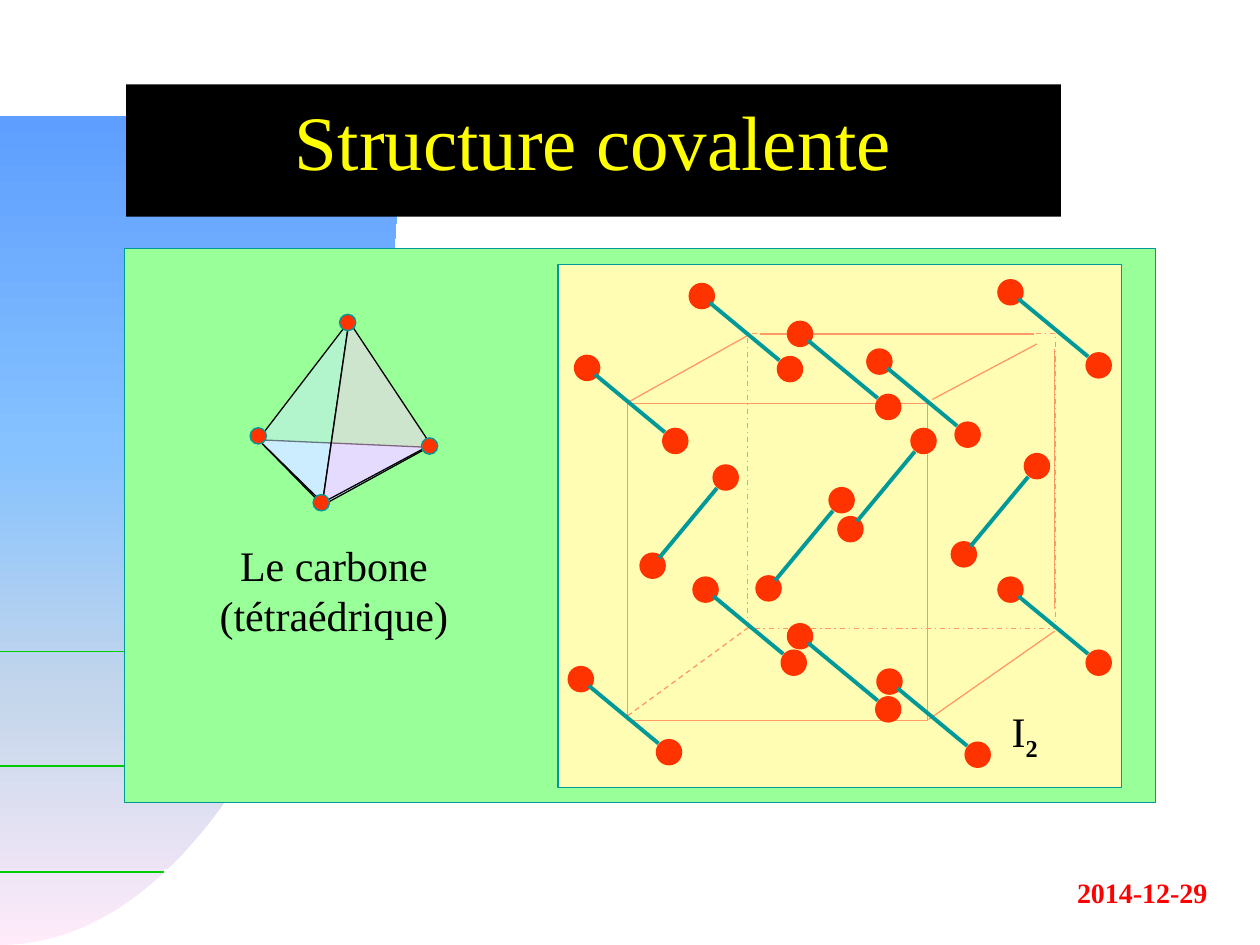
from copy import deepcopy
from dataclasses import dataclass

from pptx import Presentation
from pptx.dml.color import RGBColor
from pptx.enum.dml import MSO_LINE
from pptx.enum.shapes import MSO_CONNECTOR, MSO_SHAPE
from pptx.enum.text import MSO_ANCHOR, PP_ALIGN
from pptx.oxml.ns import qn
from pptx.oxml.xmlchemy import OxmlElement
from pptx.util import Inches, Pt

RECTANGLE, OVAL = MSO_SHAPE.RECTANGLE, MSO_SHAPE.OVAL
STRAIGHT = MSO_CONNECTOR.STRAIGHT
DASH, DASH_DOT = MSO_LINE.DASH, MSO_LINE.DASH_DOT
LEFT, CENTER, RIGHT = PP_ALIGN.LEFT, PP_ALIGN.CENTER, PP_ALIGN.RIGHT
TOP, MIDDLE = MSO_ANCHOR.TOP, MSO_ANCHOR.MIDDLE

WIDTH, HEIGHT = Inches(10), Inches(7.5)
COLUMNS, ROWS = 10, 7.5


@dataclass(frozen=True)
class Theme:
    font: str = "Times New Roman"
    title_size: int = 44
    label_size: int = 24
    date_size: int = 16
    thin: float = 0.75
    thick: float = 2.25
    white: str = "FFFFFF"
    ink: str = "010000"
    title: str = "FFFF00"
    date: str = "FF0000"
    rule: str = "00CC00"
    panel: str = "99FF99"
    crystal: str = "FFFDB3"
    teal: str = "009999"
    atom: str = "FF3300"
    cell: str = "FF9966"
    blue_face: str = "CCECFF"
    pink_face: str = "FFCCFF"
    sweep: tuple = ((0, "FFEBFA"), (0.3, "C4D6EB"), (0.6, "85C2FF"), (1, "5E9EFF"))


THEME = Theme()
RULES = ((6.92, 1.33), (6.08, 1.92), (5.17, 2.42))
APEX, WEST, EAST, SOUTH = (2.76, 2.56), (2.05, 3.46), (3.41, 3.54), (2.55, 3.99)
FACES = (
    (((2.05, 3.49), (3.4, 3.55), (2.56, 4.01)), THEME.blue_face, None),
    (((2.05, 3.49), (2.77, 2.55), (2.56, 3.99)), THEME.blue_face, 50),
    (((2.77, 2.55), (2.56, 3.99), (3.42, 3.53)), THEME.pink_face, 50),
)
CELL_EDGES = (
    ((7.37, 5.71), (8.37, 5.01)),
    ((4.99, 3.19), (5.94, 2.66)),
    ((6.03, 2.65), (8.21, 2.65)),
    ((7.4, 3.17), (8.23, 2.73)),
    ((8.37, 2.77), (8.37, 4.83)),
)
RISING = (0.58, -0.7)
FALLING = (0.7, 0.58)
RISING_STARTS = ((6.75, 4.2), (5.18, 4.49), (7.65, 4.4), (6.1, 4.67))
FALLING_STARTS = (
    (8.02, 2.32), (8.02, 4.68), (7.06, 5.41), (4.61, 5.39), (5.6, 4.68), (6.35, 5.05),
    (6.98, 2.87), (5.57, 2.35), (4.66, 2.92), (6.35, 2.65),
)


def column(number):
    return round(WIDTH * number / COLUMNS)


def row(number):
    return round(HEIGHT * number / ROWS)


def color(value):
    return RGBColor.from_string(value)


def paint(shape, fill=None, line=None, dash=None):
    shape.shadow.inherit = False
    if fill:
        shape.fill.solid()
        shape.fill.fore_color.rgb = color(fill)
    else:
        shape.fill.background()
    if line:
        shape.line.color.rgb = color(line)
        shape.line.width = Pt(THEME.thin)
        if dash:
            shape.line.dash_style = dash
    else:
        shape.line.fill.background()


def add_block(slide, kind, left, top, width, height, **look):
    shape = slide.shapes.add_shape(kind, column(left), row(top), column(width), row(height))
    paint(shape, **look)
    return shape


def add_ball(slide, center, diameter, line):
    left, top = (value - diameter / 2 for value in center)
    add_block(slide, OVAL, left, top, diameter, diameter, fill=THEME.atom, line=line)


def add_line(slide, start, end, ink, width=THEME.thin, dash=None):
    line = slide.shapes.add_connector(
        STRAIGHT, column(start[0]), row(start[1]), column(end[0]), row(end[1]))
    line.line.color.rgb = color(ink)
    line.line.width = Pt(width)
    if dash:
        line.line.dash_style = dash
    line._element.spPr.append(OxmlElement("a:effectLst"))


def add_outline(slide, points):
    corners = [(column(x), row(y)) for x, y in points]
    builder = slide.shapes.build_freeform(*corners[0])
    builder.add_line_segments(corners[1:], close=True)
    return builder.convert_to_shape()


def write(shape, text, size, ink, align=LEFT, anchor=TOP, bold=False):
    frame = shape.text_frame
    frame.word_wrap = True
    frame.vertical_anchor = anchor
    frame.text = text
    paragraph = frame.paragraphs[0]
    paragraph.alignment = align
    font = paragraph.runs[0].font
    font.name, font.size, font.bold = THEME.font, Pt(size), bold
    font.color.rgb = color(ink)
    return paragraph


def add_label(slide, left, top, width, height, *text, **style):
    box = slide.shapes.add_textbox(column(left), row(top), column(width), row(height))
    return write(box, *text, **style)


def add_subscript(paragraph, text, size, ink):
    run = paragraph.add_run()
    run.text = text
    run.font.name, run.font.size, run.font.bold = THEME.font, Pt(size), True
    run.font.color.rgb = color(ink)
    run._r.get_or_add_rPr().set("baseline", "-25000")


def add_sweep(slide, right=3.17, top=0.92, bottom=7.5, bend_x=1.75, bend_y=4.56, steps=60):
    points = [(0, top)]
    for step in range(steps + 1):
        t = step / steps
        s = 1 - t
        points.append((3 * s * t**2 * right + 3 * s**2 * t * bend_x + t**3 * right,
                       s**3 * bottom + 3 * s**2 * t * bottom + 3 * s * t**2 * bend_y + t**3 * top))
    sweep = add_outline(slide, points)
    paint(sweep)
    sweep.fill.gradient()
    sweep.fill.gradient_angle = 90
    stop_list = sweep._element.spPr.find(".//" + qn("a:gsLst"))
    for _ in THEME.sweep[2:]:
        stop_list.append(deepcopy(stop_list[0]))
    for stop, (position, value) in zip(sweep.fill.gradient_stops, THEME.sweep):
        stop.position = position
        stop.color.rgb = color(value)


def add_face(slide, points, fill, opacity):
    face = add_outline(slide, points)
    paint(face, fill, THEME.ink)
    if opacity:
        alpha = OxmlElement("a:alpha")
        alpha.set("val", str(opacity * 1000))
        face._element.spPr.find(qn("a:solidFill"))[0].append(alpha)


def add_molecule(slide, start, reach):
    def along(share):
        return tuple(origin + share * length for origin, length in zip(start, reach))

    for share in (0, 1):
        add_ball(slide, along(share), 0.2, THEME.atom)
    add_line(slide, along(0.09), along(0.88), THEME.teal, THEME.thick)


def add_background(slide):
    add_sweep(slide)
    for height, length in RULES:
        add_line(slide, (0, height), (length, height), THEME.rule)
    add_label(slide, 7.43, 6.9, 2.25, 0.37, "2014-12-29", THEME.date_size, THEME.date,
              align=RIGHT, bold=True)
    add_block(slide, RECTANGLE, 1.3, 6.9, 1.88, 0.37, fill=THEME.white)


def add_carbon(slide):
    for face in FACES:
        add_face(slide, *face)
    for corner in (SOUTH, WEST, EAST, APEX):
        add_ball(slide, corner, 0.13, THEME.teal)
    add_label(slide, 1.52, 4.23, 2.26, 0.9, "Le carbone (tétraédrique)",
              THEME.label_size, THEME.ink, align=CENTER)


def add_iodine(slide):
    add_block(slide, RECTANGLE, 4.43, 2.1, 4.47, 4.15, fill=THEME.crystal, line=THEME.teal)
    add_line(slide, (5.94, 4.98), (4.97, 5.69), THEME.cell, dash=DASH)
    add_block(slide, RECTANGLE, 5.93, 2.65, 2.45, 2.34, line=THEME.cell, dash=DASH_DOT)
    for start, end in CELL_EDGES:
        add_line(slide, start, end, THEME.cell)
    add_block(slide, RECTANGLE, 4.98, 3.2, 2.38, 2.52, line=THEME.cell)
    for starts, reach in ((RISING_STARTS, RISING), (FALLING_STARTS, FALLING)):
        for start in starts:
            add_molecule(slide, start, reach)
    formula = add_label(slide, 7.93, 5.55, 0.52, 0.5, "I", THEME.label_size, THEME.ink)
    add_subscript(formula, "2", THEME.label_size, THEME.ink)


def main():
    presentation = Presentation()
    presentation.slide_width, presentation.slide_height = WIDTH, HEIGHT
    slide = presentation.slides.add_slide(presentation.slide_layouts[6])
    add_background(slide)
    banner = add_block(slide, RECTANGLE, 1, 0.67, 7.42, 1.05, fill=THEME.ink)
    title = write(banner, "Structure covalente", THEME.title_size, THEME.title, CENTER, MIDDLE)
    title.line_spacing = 0.7
    add_block(slide, RECTANGLE, 0.99, 1.97, 8.18, 4.4, fill=THEME.panel, line=THEME.teal)
    add_carbon(slide)
    add_iodine(slide)
    presentation.save("out.pptx")


if __name__ == "__main__":
    main()
